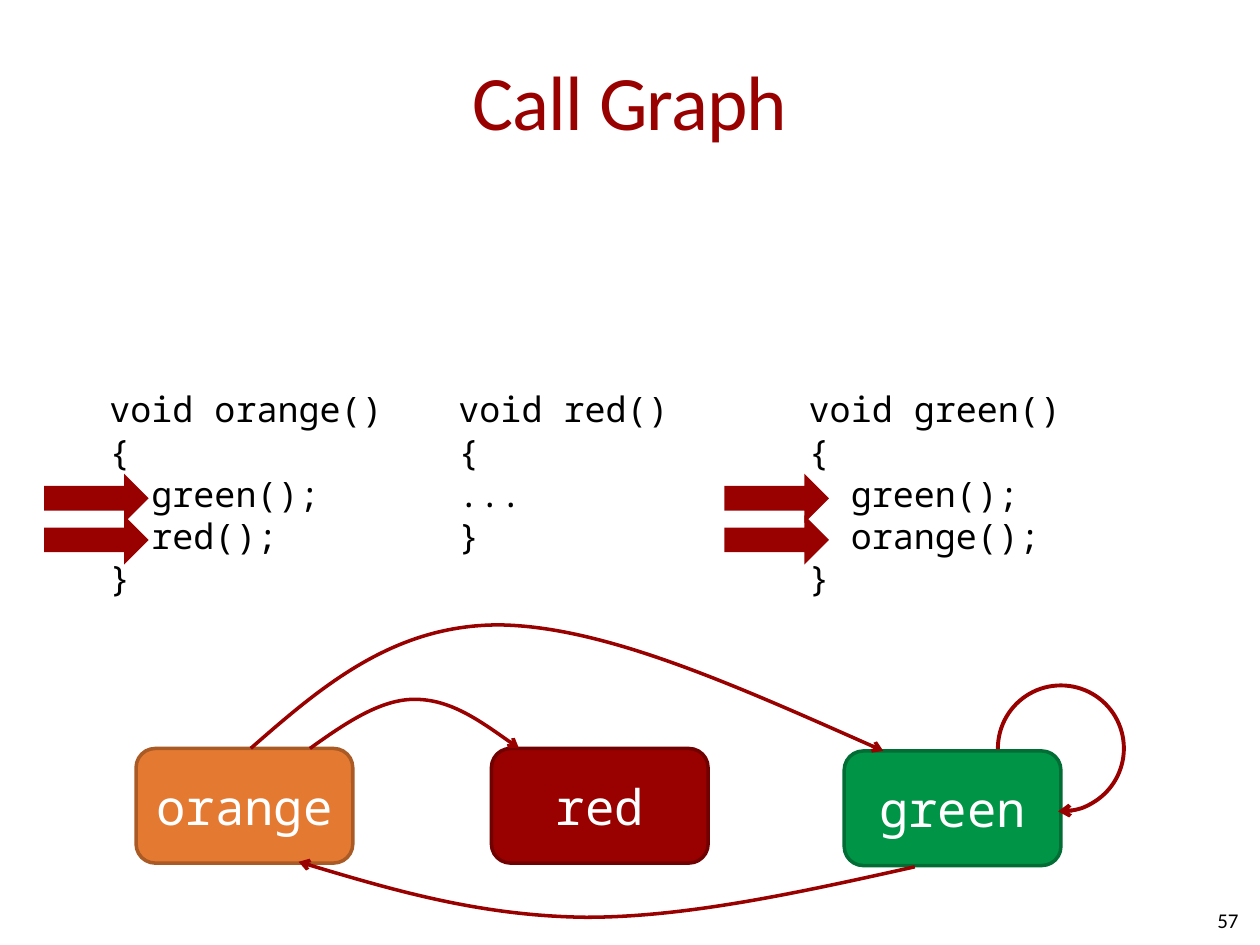
from lxml import etree
from pptx import Presentation
from pptx.dml.color import RGBColor
from pptx.enum import shapes as sh, text as tx
from pptx.oxml import ns
from pptx.util import Inches, Pt

BLACK = RGBColor(0x00, 0x00, 0x00)
WHITE = RGBColor(0xFF, 0xFF, 0xFF)
CRIMSON = RGBColor(0x99, 0x00, 0x00)
CRIMSON_EDGE = RGBColor(0x71, 0x00, 0x00)
ORANGE = RGBColor(0xE4, 0x79, 0x32)
ORANGE_EDGE = RGBColor(0xA9, 0x5A, 0x25)
GREEN = RGBColor(0x00, 0x94, 0x46)
GREEN_EDGE = RGBColor(0x00, 0x6D, 0x34)

BODY_FONT = "Calibri"
CODE_FONT = "Noto Sans Mono"

# Source listings: left, width, height, lines
LISTINGS = [
    (0.77, 3.52, 1.78, ["void orange()", "{", "  green();", "  red();", "}"]),
    (3.54, 1.91, 1.45, ["void red()", "{", "...", "}"]),
    (6.32, 3.52, 1.78, ["void green()", "{", "  green();", "  orange();", "}"]),
]

# Graph nodes: name, left, top, fill, edge
NODES = [
    ("orange", 1.08, 5.94, ORANGE, ORANGE_EDGE),
    ("red", 3.9, 5.94, CRIMSON, CRIMSON_EDGE),
    ("green", 6.7, 5.96, GREEN, GREEN_EDGE),
]

# Calls between nodes: a start point, then three points per Bezier segment
CALLS = [
    # orange to red
    [(2.46, 5.94), (2.74, 5.74), (3.02, 5.55), (3.29, 5.55),
     (3.57, 5.55), (3.84, 5.74), (4.12, 5.94)],
    # green to orange
    [(7.26, 6.88), (6.36, 7.08), (5.46, 7.28), (4.65, 7.28),
     (3.83, 7.27), (3.1, 7.06), (2.37, 6.84)],
    # orange to green
    [(1.99, 5.94), (2.55, 5.45), (3.12, 4.96), (3.96, 4.96),
     (4.8, 4.97), (5.9, 5.47), (7.01, 5.96)],
]


def box(left, top, width, height):
    return [Inches(length) for length in (left, top, width, height)]


def write_lines(frame, lines, font, size, color, align):
    frame.text = "\n".join(lines)
    for paragraph in frame.paragraphs:
        paragraph.alignment = align
        paragraph.font.name = font
        paragraph.font.size = Pt(size)
        paragraph.font.color.rgb = color


def set_margins(frame, horizontal, vertical):
    frame.margin_left = frame.margin_right = Inches(horizontal)
    frame.margin_top = frame.margin_bottom = Inches(vertical)


def add_title(slide, wording):
    title = slide.shapes.title
    title.left, title.top, title.width, title.height = box(0.5, 0.17, 9, 1.25)
    frame = title.text_frame
    frame.vertical_anchor = tx.MSO_ANCHOR.MIDDLE
    set_margins(frame, 0, 0.05)
    write_lines(frame, [wording], BODY_FONT, 44, CRIMSON, tx.PP_ALIGN.CENTER)
    # Slightly tightened letter spacing
    frame.paragraphs[0].runs[0]._r.get_or_add_rPr().set("spc", "-50")


def add_page_number(slide, number):
    frame = slide.shapes.add_textbox(*box(7.5, 7.1, 2.33, 0.4)).text_frame
    frame.word_wrap = True
    frame.vertical_anchor = tx.MSO_ANCHOR.MIDDLE
    set_margins(frame, 0, 0)
    write_lines(frame, [number], BODY_FONT, 12, BLACK, tx.PP_ALIGN.RIGHT)


def add_listing(slide, left, width, height, lines):
    frame = slide.shapes.add_textbox(*box(left, 3.03, width, height)).text_frame
    frame.word_wrap = True
    write_lines(frame, lines, CODE_FONT, 20, BLACK, tx.PP_ALIGN.LEFT)


def add_node(slide, name, left, top, fill, edge):
    node = slide.shapes.add_shape(
        sh.MSO_SHAPE.ROUNDED_RECTANGLE, *box(left, top, 1.72, 0.91))
    node.shadow.inherit = False
    node.fill.solid()
    node.fill.fore_color.rgb = fill
    node.line.color.rgb = edge
    node.line.width = Pt(2)
    node.text_frame.vertical_anchor = tx.MSO_ANCHOR.MIDDLE
    write_lines(node.text_frame, [name], CODE_FONT, 28, WHITE, tx.PP_ALIGN.CENTER)


def style_call(curve, width):
    curve.shadow.inherit = False
    curve.fill.background()
    curve.line.color.rgb = CRIMSON
    curve.line.width = Pt(width)
    etree.SubElement(curve.line._get_or_add_ln(), ns.qn("a:tailEnd"), type="arrow")


def add_call(slide, points):
    start, *rest = [(Inches(x), Inches(y)) for x, y in points]
    builder = slide.shapes.build_freeform(*start)
    builder.add_line_segments(rest, close=False)
    curve = builder.convert_to_shape()
    # Merge each three line points into one cubic Bezier segment
    lines = list(curve._element.iter(ns.qn("a:lnTo")))
    for first in range(0, len(lines), 3):
        bezier = etree.Element(ns.qn("a:cubicBezTo"))
        lines[first].addprevious(bezier)
        for line in lines[first:first + 3]:
            bezier.append(line[0])
            line.getparent().remove(line)
    style_call(curve, 2)


def add_self_call(slide):
    loop = slide.shapes.add_shape(sh.MSO_SHAPE.ARC, *box(7.92, 5.44, 1, 1))
    loop.adjustments[0] = 107.56
    loop.adjustments[1] = 55.52
    style_call(loop, 2.25)


def add_pointer(slide, left, top):
    pointer = slide.shapes.add_shape(
        sh.MSO_SHAPE.RIGHT_ARROW, *box(left, top, 0.83, 0.39))
    pointer.shadow.inherit = False
    pointer.fill.solid()
    pointer.fill.fore_color.rgb = CRIMSON
    pointer.line.fill.background()


def main():
    deck = Presentation()
    deck.slide_width, deck.slide_height = Inches(10), Inches(7.5)
    slide = deck.slides.add_slide(deck.slide_layouts[5])

    add_title(slide, "Call Graph")
    add_page_number(slide, "57")
    for listing in LISTINGS:
        add_listing(slide, *listing)

    # Call graph
    for node in NODES:
        add_node(slide, *node)
    for call in CALLS:
        add_call(slide, call)
    add_self_call(slide)

    # Pointers at the call lines in the orange and green listings
    for left in (0.35, 5.75):
        for top in (3.76, 4.09):
            add_pointer(slide, left, top)

    deck.save("out.pptx")


if __name__ == "__main__":
    main()
